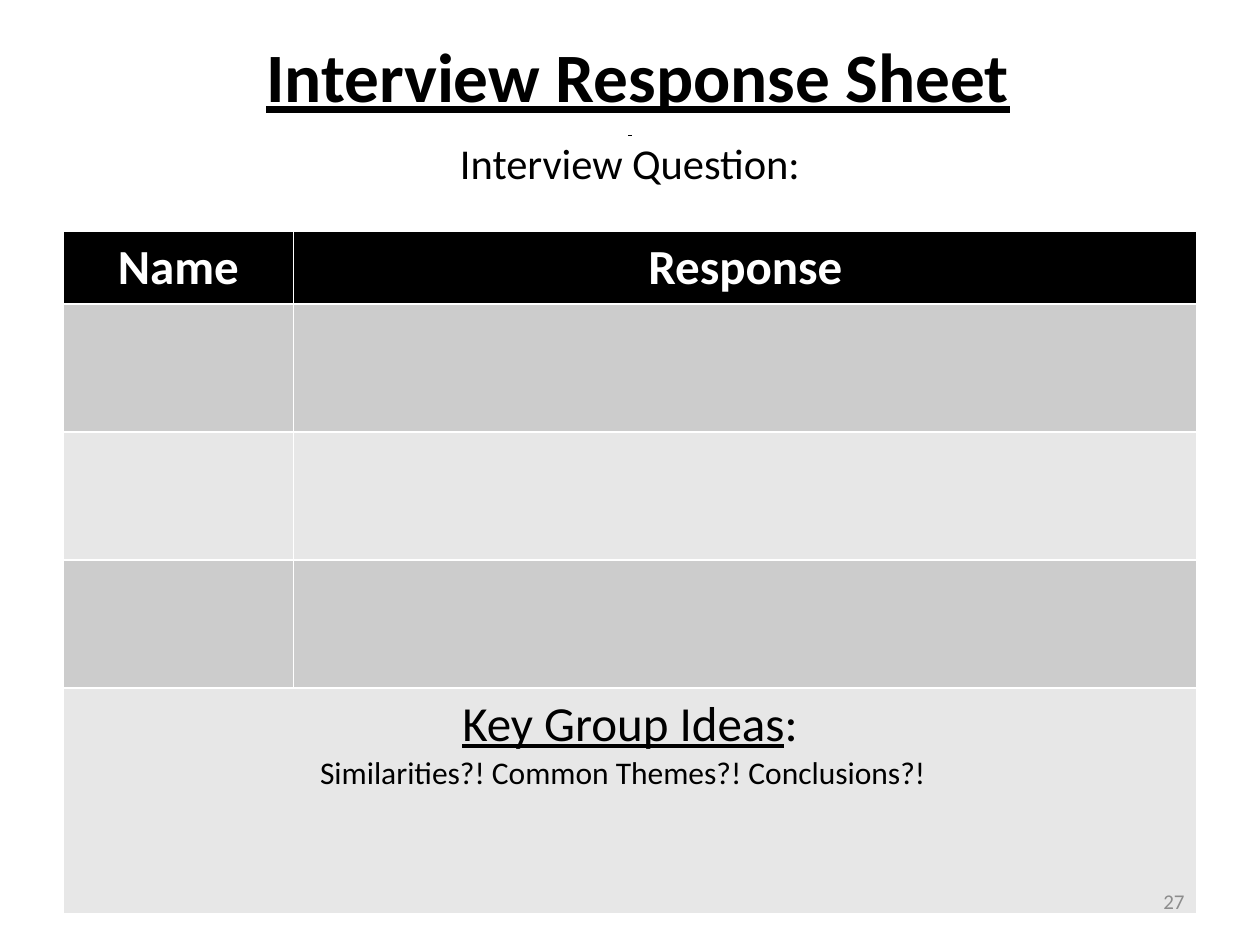
from dataclasses import dataclass

from pptx import Presentation
from pptx.dml.color import RGBColor
from pptx.enum import text
from pptx.util import Cm, Pt


@dataclass(frozen=True)
class Theme:
    font: str = "Calibri"
    ink: str = "000000"
    paper: str = "FFFFFF"
    band_dark: str = "CCCCCC"
    band_light: str = "E7E7E7"
    muted: str = "8C8C8C"
    title: float = 39.6
    question: float = 24.3
    spacer: float = 9.9
    heading: float = 28
    body: float = 18
    number: float = 12


THEME = Theme()
ALIGN = text.PP_ALIGN


def write(para, spans, size, color=THEME.ink, bold=False, align=ALIGN.CENTER):
    """Fill a paragraph with (wording, underlined) spans in one font."""
    para.alignment = align
    para.font.name = THEME.font
    para.font.size = Pt(size)
    para.font.bold = bold
    para.font.color.rgb = RGBColor.from_string(color)
    for wording, underlined in spans:
        span = para.add_run()
        span.text = wording
        span.font.underline = underlined


def place(box, left, top, width, height):
    box.left, box.top, box.width, box.height = map(Cm, (left, top, width, height))


def add_title(page):
    box = page.shapes.title
    place(box, 1.27, 0.84, 22.86, 4.65)
    frame = box.text_frame
    frame.word_wrap = True
    frame.auto_size = text.MSO_AUTO_SIZE.NONE
    frame.vertical_anchor = text.MSO_ANCHOR.MIDDLE
    # Keep the text above the top edge of the table
    frame.margin_top, frame.margin_bottom = 0, Cm(0.84)
    lines = [
        ([(" ", False), ("Interview Response Sheet", True)], THEME.title, True),
        ([(" ", True)], THEME.spacer, True),
        ([("Interview Question: " + "_" * 36, False)], THEME.question, False),
    ]
    for index, (spans, size, bold) in enumerate(lines):
        para = frame.add_paragraph() if index else frame.paragraphs[0]
        para.space_before = Pt(0)
        para.line_spacing = 1.0
        write(para, spans, size, bold=bold)


def add_response_table(page):
    widths = (4.65, 18.21)
    heights = (1.43, 2.58, 2.58, 2.58, 4.55)
    table = page.shapes.add_table(
        len(heights), len(widths), Cm(1.27), Cm(4.67),
        Cm(sum(widths)), Cm(sum(heights))).table
    for column, width in zip(table.columns, widths):
        column.width = Cm(width)

    # Black header over alternating grey bands
    bands = (THEME.band_light, THEME.band_dark)
    for index, (row, height) in enumerate(zip(table.rows, heights)):
        row.height = Cm(height)
        for cell in row.cells:
            cell.fill.solid()
            color = bands[index % 2] if index else THEME.ink
            cell.fill.fore_color.rgb = RGBColor.from_string(color)

    for cell, label in zip(table.rows[0].cells, ("Name", "Response")):
        write(cell.text_frame.paragraphs[0], [(label, False)],
              THEME.heading, THEME.paper, bold=True)

    # Summary row across both columns
    last = len(heights) - 1
    summary = table.cell(last, 0)
    summary.merge(table.cell(last, 1))
    frame = summary.text_frame
    write(frame.paragraphs[0], [("Key Group Ideas", True), (":", False)],
          THEME.heading)
    write(frame.add_paragraph(),
          [("Similarities?! Common Themes?! Conclusions?!  ", False)], THEME.body)


def add_page_number(page, number):
    box = page.shapes.add_textbox(0, 0, 0, 0)
    place(box, 18.2, 17.65, 5.93, 1.02)
    frame = box.text_frame
    frame.word_wrap = True
    frame.vertical_anchor = text.MSO_ANCHOR.MIDDLE
    write(frame.paragraphs[0], [(str(number), False)], THEME.number,
          THEME.muted, align=ALIGN.RIGHT)


def main():
    deck = Presentation()
    deck.slide_width, deck.slide_height = Cm(25.4), Cm(19.05)
    page = deck.slides.add_slide(deck.slide_layouts[5])  # title only
    add_title(page)
    add_response_table(page)
    add_page_number(page, 27)
    deck.save("out.pptx")


if __name__ == "__main__":
    main()
